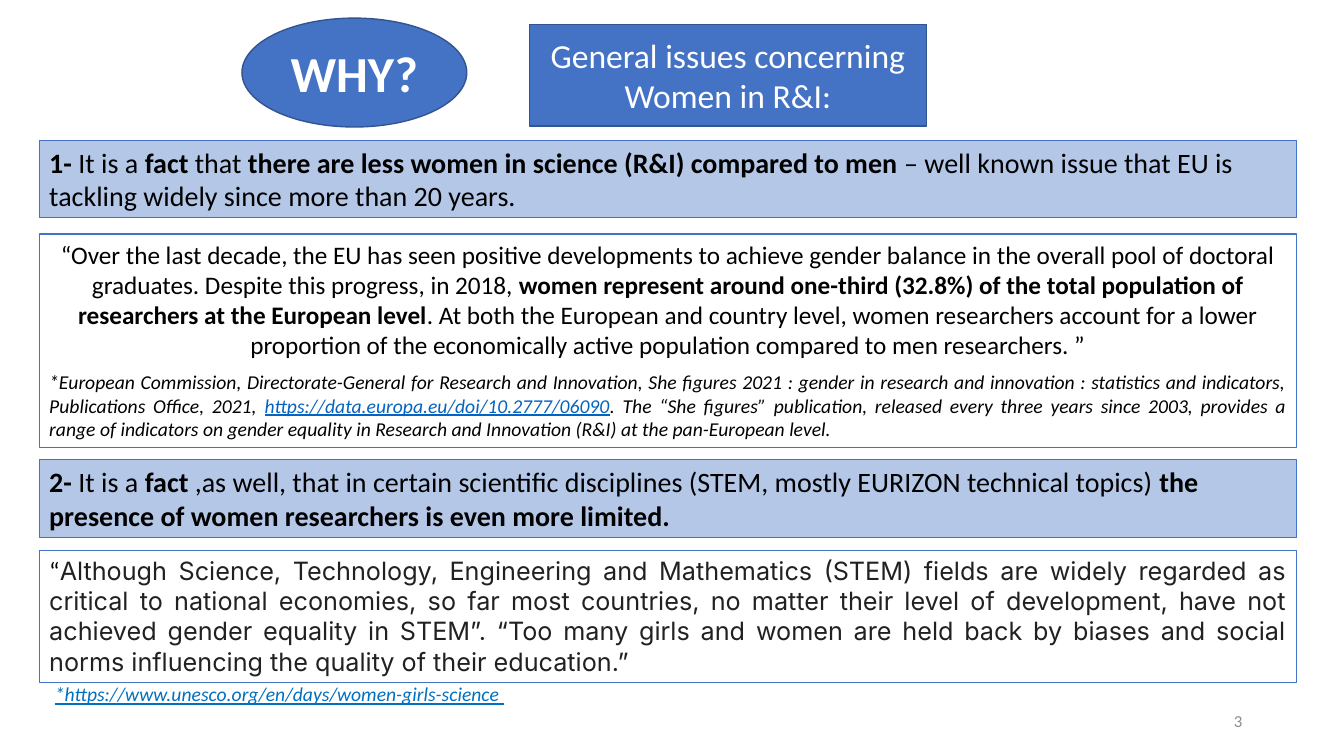
from pptx import Presentation
from pptx import util as u
from pptx.dml.color import RGBColor
from pptx.enum import shapes, text

BLUE = RGBColor(0x44, 0x72, 0xC4)
DARK_BLUE = RGBColor(0x32, 0x54, 0x91)
PALE_BLUE = RGBColor(0xB4, 0xC7, 0xE7)
WHITE = RGBColor(0xFF, 0xFF, 0xFF)
BLACK = RGBColor(0, 0, 0)
INK = RGBColor(0x21, 0x21, 0x21)
GREY = RGBColor(0x8C, 0x8C, 0x8C)
LINK = RGBColor(0x05, 0x63, 0xC1)
LINK_LIGHT = RGBColor(0x00, 0x70, 0xC0)

LEFT, WIDTH = 0.39, 12.47
ALIGN = text.PP_ALIGN
ANCHOR = text.MSO_ANCHOR
BOLD = {"bold": True}


class Deck:
    font = "Calibri"

    def __init__(self):
        self.prs = Presentation()
        self.prs.slide_width = u.Inches(13.33)
        self.prs.slide_height = u.Inches(7.5)
        self.s = self.prs.slides.add_slide(self.prs.slide_layouts[5])

    def paint(self, sp, fill, line, weight):
        sp.fill.solid()
        sp.fill.fore_color.rgb = fill
        sp.line.color.rgb = line
        sp.line.width = u.Pt(weight)

    def set_text(self, sp, paragraphs, anchor=ANCHOR.TOP):
        tf = sp.text_frame
        frame = {"word_wrap": True, "auto_size": text.MSO_AUTO_SIZE.NONE,
                 "vertical_anchor": anchor}
        for key, value in frame.items():
            setattr(tf, key, value)
        for i, (layout, base, runs) in enumerate(paragraphs):
            p = tf.add_paragraph() if i else tf.paragraphs[0]
            for key, value in layout.items():
                setattr(p, key, value)
            for words, extra in runs:
                r = p.add_run()
                r.text = words
                fmt = {"name": self.font, "color": BLACK, **base, **extra}
                r.font.color.rgb = fmt.pop("color")
                for key, value in fmt.items():
                    setattr(r.font, key, value)

    def title(self, box, words, fmt):
        sp = self.s.shapes.title
        for key, value in zip(("left", "top", "width", "height"), box):
            setattr(sp, key, u.Inches(value))
        self.paint(sp, BLUE, DARK_BLUE, 1)
        self.set_text(sp, [({"alignment": ALIGN.CENTER}, fmt, [(words, {})])], ANCHOR.MIDDLE)

    def shape(self, kind, box, fill, line, weight, paragraphs, anchor=ANCHOR.TOP):
        sp = self.s.shapes.add_shape(kind, *map(u.Inches, box))
        sp.shadow.inherit = False
        self.paint(sp, fill, line, weight)
        self.set_text(sp, paragraphs, anchor)

    def panel(self, top, height, fill, weight, paragraphs):
        self.shape(shapes.MSO_SHAPE.RECTANGLE, (LEFT, top, WIDTH, height),
                   fill, BLUE, weight, paragraphs)

    def fact(self, top, runs):
        layout = {"alignment": ALIGN.LEFT}
        self.panel(top, 0.77, PALE_BLUE, 0.5, [(layout, {"size": u.Pt(20)}, runs)])

    def quote(self, top, height, paragraphs):
        self.panel(top, height, WHITE, 1, paragraphs)

    def label(self, box, words, layout, fmt):
        sp = self.s.shapes.add_textbox(*map(u.Inches, box))
        self.set_text(sp, [(layout, fmt, [(words, {})])], ANCHOR.MIDDLE)


def main():
    deck = Deck()
    deck.title((5.25, 0.24, 3.94, 1.01), "General issues concerning Women in R&I:",
               {"size": u.Pt(24), "color": WHITE})
    why = {"size": u.Pt(36), "bold": True, "color": WHITE}
    deck.shape(shapes.MSO_SHAPE.OVAL, (2.4, 0.18, 2.23, 1.08), BLUE, DARK_BLUE, 1,
               [({"alignment": ALIGN.CENTER}, why, [("WHY?", {})])], ANCHOR.MIDDLE)

    deck.fact(1.39, [
        ("1- ", BOLD), ("It is a ", {}), ("fact", BOLD), (" that ", {}),
        ("there are less women in science (R&I) compared to men ", BOLD),
        ("– well known issue that EU is tackling widely since more than 20 years.", {}),
    ])
    deck.quote(2.32, 2.12, [
        ({"alignment": ALIGN.CENTER}, {"size": u.Pt(18)}, [
            ("“Over the last decade, the EU has seen positive developments to achieve "
             "gender balance in the overall pool of doctoral graduates. Despite this "
             "progress, in 2018, ", {}),
            ("women represent around one-third (32.8%) of the total population of "
             "researchers at the European level", BOLD),
            (". At both the European and country level, women researchers account for a "
             "lower proportion of the economically active population compared to men "
             "researchers. ”", {}),
        ]),
        ({"alignment": ALIGN.JUSTIFY, "space_before": u.Pt(7.3)},
         {"size": u.Pt(14), "italic": True}, [
            ("*European Commission, Directorate-General for Research and Innovation, She "
             "figures 2021 : gender in research and innovation : statistics and "
             "indicators, Publications Office, 2021, ", {}),
            ("https://data.europa.eu/doi/10.2777/06090", {"color": LINK, "underline": True}),
            (". The “She figures” publication, released every three years since 2003, "
             "provides a range of indicators on gender equality in Research and "
             "Innovation (R&I) at the pan-European level.", {}),
        ]),
    ])
    deck.fact(4.56, [
        ("2- ", BOLD), ("It is a ", {}), ("fact", BOLD),
        (" ,as well, that in certain scientific disciplines (STEM, mostly EURIZON "
         "technical topics) ", {}),
        ("the presence of women researchers is even more limited.", BOLD),
    ])
    deck.quote(5.46, 1.31, [
        ({"alignment": ALIGN.JUSTIFY}, {"size": u.Pt(18)}, [
            ("“", {}),
            ("Although Science, Technology, Engineering and Mathematics (STEM) fields are "
             "widely regarded as critical to national economies, so far most countries, "
             "no matter their level of development, have not achieved gender equality in "
             "STEM”. “Too many girls and women are held back by biases and social norms "
             "influencing the quality of their education.”",
             {"name": "Inter", "color": INK}),
        ]),
        ({"alignment": ALIGN.LEFT},
         {"size": u.Pt(14), "italic": True, "color": LINK_LIGHT}, [
            (" ", {"size": u.Pt(18)}),
            ("*https://www.unesco.org/en/days/women-girls-science ", {"underline": True}),
        ]),
    ])
    deck.label((9.42, 6.95, 3, 0.4), "3", {"alignment": ALIGN.RIGHT},
               {"size": u.Pt(12), "color": GREY})
    deck.prs.save("out.pptx")


if __name__ == "__main__":
    main()
